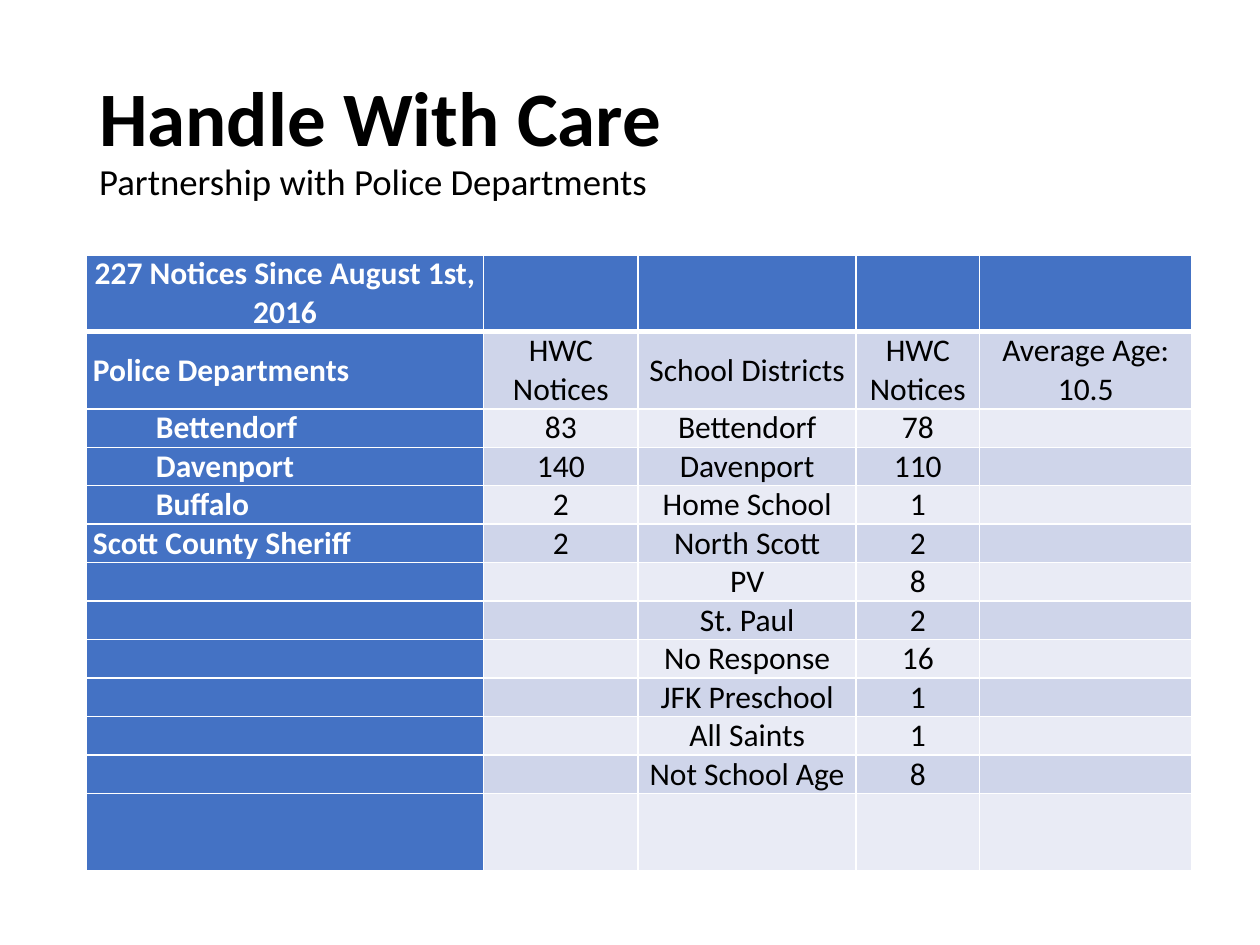
from lxml import etree
from pptx import Presentation
from pptx import util as u
from pptx.dml.color import RGBColor
from pptx.enum import text
from pptx.oxml import ns

COLORS = {"text": "000000", "white": "FFFFFF", "blue": "4472C4",
          "band_dark": "CFD5EA", "band_light": "E9EBF5"}

COL_WIDTHS = [226.8, 88.4, 124.6, 70.4, 121.6]
ROW_HEIGHTS = [44, 44] + [22] * 10 + [44]
ROWS = [
    ["227 Notices Since August 1st, 2016"],
    ["Police Departments", "HWC Notices", "School Districts", "HWC Notices", "Average Age: 10.5"],
    ["Bettendorf", "83", "Bettendorf", "78"],
    ["Davenport", "140", "Davenport", "110"],
    ["Buffalo", "2", "Home School", "1"],
    ["Scott County Sheriff", "2", "North Scott", "2"],
    ["", "", "PV", "8"],
    ["", "", "St. Paul", "2"],
    ["", "", "No Response", "16"],
    ["", "", "JFK Preschool", "1"],
    ["", "", "All Saints", "1"],
    ["", "", "Not School Age", "8"],
    [],
]
INDENTED_ROWS = (2, 3, 4)


class Deck:
    font = "Calibri"
    table_size = 18

    def __init__(self, width, height):
        self.prs = Presentation()
        self.prs.slide_width, self.prs.slide_height = u.Pt(width), u.Pt(height)
        self.s = self.prs.slides.add_slide(self.prs.slide_layouts[5])

    def color(self, name):
        return RGBColor.from_string(COLORS[name])

    def title(self, x, y, w, h, lines):
        sp = self.s.shapes.title
        sp.left, sp.top, sp.width, sp.height = map(u.Pt, (x, y, w, h))
        tf = sp.text_frame
        tf.word_wrap = True
        tf.auto_size = text.MSO_AUTO_SIZE.NONE
        tf.vertical_anchor = text.MSO_ANCHOR.MIDDLE
        p = tf.paragraphs[0]
        p.alignment = text.PP_ALIGN.LEFT
        p.line_spacing = 0.9
        for i, (line, size, bold) in enumerate(lines):
            if i:
                p.add_line_break()
            r = p.add_run()
            r.text = line
            r.font.size, r.font.bold = u.Pt(size), bold
            r.font.name = self.font
            r.font.color.rgb = self.color("text")

    def borders(self, cell, widths):
        tc_pr = cell._tc.get_or_add_tcPr()
        for side, width in widths.items():
            ln = etree.SubElement(tc_pr, ns.qn(f"a:ln{side}"), w=str(u.Pt(width)))
            fill = etree.SubElement(ln, ns.qn("a:solidFill"))
            etree.SubElement(fill, ns.qn("a:srgbClr"), val=COLORS["white"])

    def cell(self, cell, value, row, col):
        heading = row == 0 or col == 0
        self.borders(cell, {"L": 1, "R": 1, "T": 3 if row == 1 else 1, "B": 3 if row == 0 else 1})
        band = "band_dark" if row % 2 else "band_light"
        cell.fill.solid()
        cell.fill.fore_color.rgb = self.color("blue" if heading else band)
        cell.margin_left = cell.margin_right = u.Pt(3.6)
        cell.margin_top = cell.margin_bottom = 0
        cell.vertical_anchor = text.MSO_ANCHOR.MIDDLE
        p = cell.text_frame.paragraphs[0]
        p.text = value
        left = col == 0 and row > 0
        p.alignment = text.PP_ALIGN.LEFT if left else text.PP_ALIGN.CENTER
        if left and row in INDENTED_ROWS:
            p.level = 1
            p._p.get_or_add_pPr().set("marL", str(u.Pt(36)))
        p.font.name, p.font.size, p.font.bold = self.font, u.Pt(self.table_size), heading
        p.font.color.rgb = self.color("white" if heading else "text")

    def table(self, x, y, widths, heights, rows):
        frame = self.s.shapes.add_table(len(heights), len(widths), u.Pt(x), u.Pt(y),
                                        u.Pt(sum(widths)), u.Pt(sum(heights)))
        tbl = frame.table
        tbl.first_col = True
        for column, width in zip(tbl.columns, widths):
            column.width = u.Pt(width)
        for i, (height, values) in enumerate(zip(heights, rows)):
            tbl.rows[i].height = u.Pt(height)
            for j in range(len(widths)):
                self.cell(tbl.cell(i, j), values[j] if j < len(values) else "", i, j)


def main():
    deck = Deck(720, 540)
    deck.title(49.5, 28.8, 620.6, 104.4, [("Handle With Care", 44, True),
                                          ("Partnership with Police Departments", 21, False)])
    deck.table(49.5, 145.6, COL_WIDTHS, ROW_HEIGHTS, ROWS)
    deck.prs.save("out.pptx")


if __name__ == "__main__":
    main()
